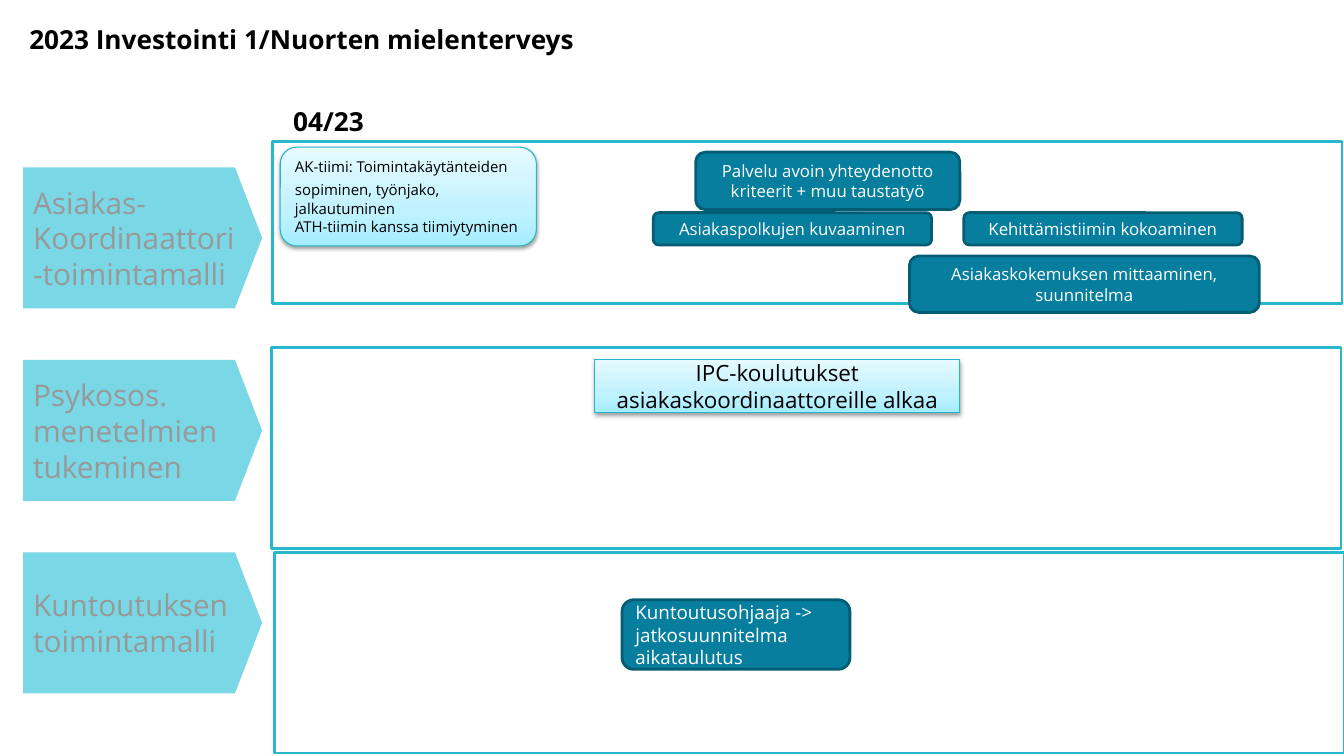
from dataclasses import dataclass

from lxml.etree import SubElement
from pptx import Presentation
from pptx.dml.color import RGBColor
from pptx.enum.shapes import MSO_SHAPE
from pptx.enum.text import MSO_ANCHOR, PP_ALIGN
from pptx.oxml import parse_xml
from pptx.oxml.ns import nsdecls, qn
from pptx.util import Inches, Pt

FONT = "Open Sans"
BLACK, WHITE, GREY = "000000", "FFFFFF", "989998"
ARROW_FILL, LANE_LINE = "7AD7E5", "28B8CE"
TASK_FILL, TASK_LINE = "077E9E", "055D74"
PALE_LINE = "23B6CD"
PALE_STOPS = ((0, "A6ECFF"), (35, "C0F2FF"), (100, "E6FAFF"))

Run = tuple[str, float]
Lines = list[list[Run]]


@dataclass
class Lane:
    label: Lines
    arrow_top: float
    left: float
    top: float
    height: float


@dataclass
class Task:
    left: float
    top: float
    width: float
    height: float
    lines: Lines
    align: PP_ALIGN = PP_ALIGN.CENTER
    pale: bool = False
    rounded: bool = True


def plain(size: float, *lines: str) -> Lines:
    """Lines of one run each, all in the same size."""
    return [[(line, size)] for line in lines]


LANES = [
    Lane(plain(21.3, "Asiakas-", "Koordinaattori", "-toimintamalli"),
         1.66, 2.7, 1.4, 1.61),
    Lane(plain(21.3, "Psykosos.", "menetelmien", "tukeminen"),
         3.57, 2.69, 3.45, 1.99),
    Lane(plain(21.3, "Kuntoutuksen", "toimintamalli"),
         5.48, 2.72, 5.48, 1.99),
]

TASKS = [
    Task(2.78, 1.46, 2.54, 0.98,
         [[("AK-tiimi: Toimintakäytänteiden sopiminen, työnjako,", 10.7),
           (" ", 14), ("jalkautuminen", 10.7)],
          [("ATH-tiimin kanssa tiimiytyminen", 10.7)]],
         PP_ALIGN.LEFT, pale=True),
    Task(5.9, 3.57, 3.62, 0.52,
         plain(16, "IPC-koulutukset asiakaskoordinaattoreille alkaa"),
         pale=True, rounded=False),
    Task(6.17, 5.95, 2.26, 0.69,
         plain(13.4, "Kuntoutusohjaaja -> jatkosuunnitelma aikataulutus"),
         PP_ALIGN.LEFT),
    Task(6.9, 1.51, 2.62, 0.57,
         plain(12, "Palvelu avoin yhteydenotto", "kriteerit + muu taustatyö")),
    Task(6.48, 2.11, 2.76, 0.32, plain(12, "Asiakaspolkujen kuvaaminen")),
    Task(9.02, 2.54, 3.47, 0.56,
         plain(12, "Asiakaskokemuksen mittaaminen, suunnitelma")),
    Task(9.56, 2.11, 2.76, 0.32, plain(12, "Kehittämistiimin kokoaminen")),
]


def rgb(color: str) -> RGBColor:
    return RGBColor.from_string(color)


def paint(sp, fill: str, line: str | None = None, width: float = 2) -> None:
    sp.shadow.inherit = False
    sp.fill.solid()
    sp.fill.fore_color.rgb = rgb(fill)
    if line:
        sp.line.color.rgb = rgb(line)
        sp.line.width = Pt(width)
    else:
        sp.line.fill.background()


def paint_pale(sp) -> None:
    """Upward pale gradient with a soft shadow below."""
    paint(sp, WHITE, PALE_LINE, 0.75)
    stops = "".join(f'<a:gs pos="{pos * 1000}"><a:srgbClr val="{color}"/></a:gs>'
                    for pos, color in PALE_STOPS)
    grad = parse_xml(f'<a:gradFill {nsdecls("a")} rotWithShape="1"><a:gsLst>{stops}'
                     '</a:gsLst><a:lin ang="16200000" scaled="0"/></a:gradFill>')
    sp_pr = sp._element.spPr
    sp_pr.replace(sp_pr.find(qn("a:solidFill")), grad)
    shadow = SubElement(sp_pr.find(qn("a:effectLst")), qn("a:outerShdw"),
                        blurRad=str(Pt(3.1)), dist=str(Pt(1.6)),
                        dir="5400000", rotWithShape="0")
    color = SubElement(shadow, qn("a:srgbClr"), val=BLACK)
    SubElement(color, qn("a:alpha"), val="38000")


def write(sp, lines: Lines, color: str, bold: bool = False,
          align: PP_ALIGN = PP_ALIGN.LEFT,
          anchor: MSO_ANCHOR = MSO_ANCHOR.MIDDLE) -> None:
    tf = sp.text_frame
    tf.word_wrap = True
    tf.vertical_anchor = anchor
    for i, runs in enumerate(lines):
        p = tf.add_paragraph() if i else tf.paragraphs[0]
        p.alignment = align
        for text, size in runs:
            r = p.add_run()
            r.text = text
            r.font.name = FONT
            r.font.size = Pt(size)
            r.font.bold = bold
            r.font.color.rgb = rgb(color)


def add_lane(slide, lane: Lane) -> None:
    left, tip, shoulder, height = 0.23, 2.6, 2.33, 1.4
    top, bottom = lane.arrow_top, lane.arrow_top + height
    outline = [(shoulder, top), (tip, top + height / 2),
               (shoulder, bottom), (left, bottom)]
    builder = slide.shapes.build_freeform(Inches(left), Inches(top))
    builder.add_line_segments([(Inches(x), Inches(y)) for x, y in outline])
    arrow = builder.convert_to_shape()
    paint(arrow, ARROW_FILL)
    write(arrow, lane.label, GREY)
    frame = slide.shapes.add_shape(
        MSO_SHAPE.RECTANGLE, Inches(lane.left), Inches(lane.top),
        Inches(10.61), Inches(lane.height))
    paint(frame, WHITE, LANE_LINE)


def add_task(slide, task: Task) -> None:
    kind = MSO_SHAPE.ROUNDED_RECTANGLE if task.rounded else MSO_SHAPE.RECTANGLE
    sp = slide.shapes.add_shape(kind, Inches(task.left), Inches(task.top),
                                Inches(task.width), Inches(task.height))
    if task.pale:
        paint_pale(sp)
    else:
        paint(sp, TASK_FILL, TASK_LINE)
    write(sp, task.lines, BLACK if task.pale else WHITE, align=task.align)


def main() -> None:
    prs = Presentation()
    prs.slide_width, prs.slide_height = Inches(13.33), Inches(7.5)
    slide = prs.slides.add_slide(prs.slide_layouts[5])

    title = slide.shapes.title
    title.left, title.top = Inches(0.19), Inches(0.18)
    title.width, title.height = Inches(6.08), Inches(0.41)
    write(title, plain(18.7, "2023 Investointi 1/Nuorten mielenterveys"),
          BLACK, bold=True, anchor=MSO_ANCHOR.TOP)

    for lane in LANES:
        add_lane(slide, lane)
    month = slide.shapes.add_textbox(Inches(2.81), Inches(1), Inches(1.11), Inches(0.41))
    write(month, plain(18.7, "04/23"), BLACK, bold=True, anchor=MSO_ANCHOR.TOP)
    for task in TASKS:
        add_task(slide, task)

    prs.save("out.pptx")


if __name__ == "__main__":
    main()
